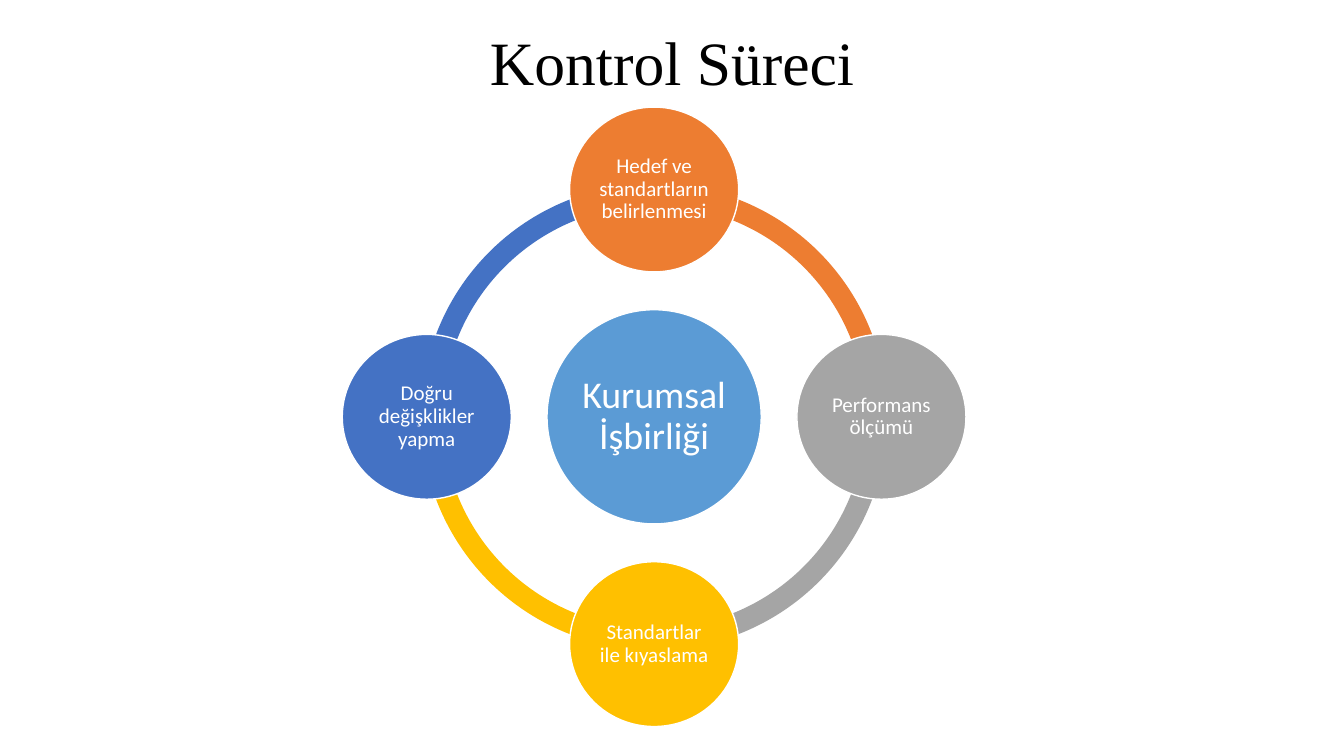
from dataclasses import dataclass
from math import cos, radians, sin

from pptx import Presentation
from pptx.dml.color import RGBColor
from pptx.enum.shapes import MSO_SHAPE
from pptx.enum.text import MSO_ANCHOR, MSO_AUTO_SIZE, PP_ALIGN
from pptx.util import Pt

EMU_PER_PX = 9525


@dataclass(frozen=True)
class Theme:
    ink: str = "000000"
    paper: str = "FFFFFF"
    hub: str = "5B9BD5"
    steps: tuple = ("ED7D31", "A5A5A5", "FFC000", "4472C4")
    heading_font: str = "Times New Roman"
    body_font: str = "Calibri"
    heading_size: int = 44
    hub_size: int = 27
    step_size: int = 15


@dataclass(frozen=True)
class Box:
    left: float
    top: float
    width: float
    height: float

    def centre(self):
        return self.left + self.width / 2, self.top + self.height / 2

    def emu(self):
        return [px(n) for n in (self.left, self.top, self.width, self.height)]


THEME = Theme()
SLIDE = Box(0, 0, 1280, 720)
TITLE = Box(457, 16, 423, 93)
CYCLE = Box(326, 102, 594, 590)
RING = 444
RING_THICKNESS = 0.046
HUB = 204
STEP_WIDTH, STEP_HEIGHT = 161, 157
CIRCLE_INSET = 2
STEPS = (
    "Hedef ve standartların belirlenmesi",
    "Performans ölçümü",
    "Standartlar ile kıyaslama",
    "Doğru değişklikler yapma",
)


def px(length):
    return round(length * EMU_PER_PX)


def centred_box(x, y, width, height):
    return Box(x - width / 2, y - height / 2, width, height)


def write(frame, text, font, size, color, align):
    settings = {
        "text": text,
        "word_wrap": True,
        "auto_size": MSO_AUTO_SIZE.NONE,
        "vertical_anchor": MSO_ANCHOR.MIDDLE,
    }
    for name, value in settings.items():
        setattr(frame, name, value)
    paragraph = frame.paragraphs[0]
    paragraph.alignment = align
    paragraph.line_spacing = 0.9
    run_font = paragraph.runs[0].font
    run_font.name = font
    run_font.size = Pt(size)
    run_font.color.rgb = RGBColor.from_string(color)


def add_filled(shapes, preset, box, color):
    shape = shapes.add_shape(preset, *box.emu())
    shape.shadow.inherit = False
    shape.fill.solid()
    shape.fill.fore_color.rgb = RGBColor.from_string(color)
    return shape


def add_arc(shapes, box, color, start):
    arc = add_filled(shapes, MSO_SHAPE.BLOCK_ARC, box, color)
    arc.line.fill.background()
    angles = [degrees % 360 * 60000 / 100000 for degrees in (start, start + 90)]
    for index, value in enumerate((*angles, RING_THICKNESS)):
        arc.adjustments[index] = value


def add_circle(shapes, box, color, text, size):
    circle = add_filled(shapes, MSO_SHAPE.OVAL, box, color)
    circle.line.color.rgb = RGBColor.from_string(THEME.paper)
    circle.line.width = Pt(1)
    for side in ("left", "top", "right", "bottom"):
        setattr(circle.text_frame, f"margin_{side}", px(CIRCLE_INSET))
    write(circle.text_frame, text, THEME.body_font, size, THEME.paper,
          PP_ALIGN.CENTER)


def place_title(slide, box, text):
    title = slide.shapes.title
    for name, value in zip(("left", "top", "width", "height"), box.emu()):
        setattr(title, name, value)
    write(title.text_frame, text, THEME.heading_font, THEME.heading_size,
          THEME.ink, PP_ALIGN.LEFT)


def add_cycle(slide, box, hub, steps):
    shapes = slide.shapes.add_group_shape().shapes
    x, y = box.centre()
    orbit_x = (box.width - STEP_WIDTH) / 2
    orbit_y = (box.height - STEP_HEIGHT) / 2
    starts = [270 + 90 * index for index in range(len(steps))]

    for start, color in zip(starts, THEME.steps):
        add_arc(shapes, centred_box(x, y, RING, RING), color, start)

    add_circle(shapes, centred_box(x, y, HUB, HUB), THEME.hub, hub,
               THEME.hub_size)

    for start, color, step in zip(starts, THEME.steps, steps):
        step_x = x + orbit_x * cos(radians(start))
        step_y = y + orbit_y * sin(radians(start))
        add_circle(shapes, centred_box(step_x, step_y, STEP_WIDTH, STEP_HEIGHT),
                   color, step, THEME.step_size)


def main():
    deck = Presentation()
    deck.slide_width = px(SLIDE.width)
    deck.slide_height = px(SLIDE.height)
    slide = deck.slides.add_slide(deck.slide_layouts.get_by_name("Title Only"))
    place_title(slide, TITLE, "Kontrol Süreci")
    add_cycle(slide, CYCLE, "Kurumsal İşbirliği", STEPS)
    deck.save("out.pptx")


if __name__ == "__main__":
    main()
